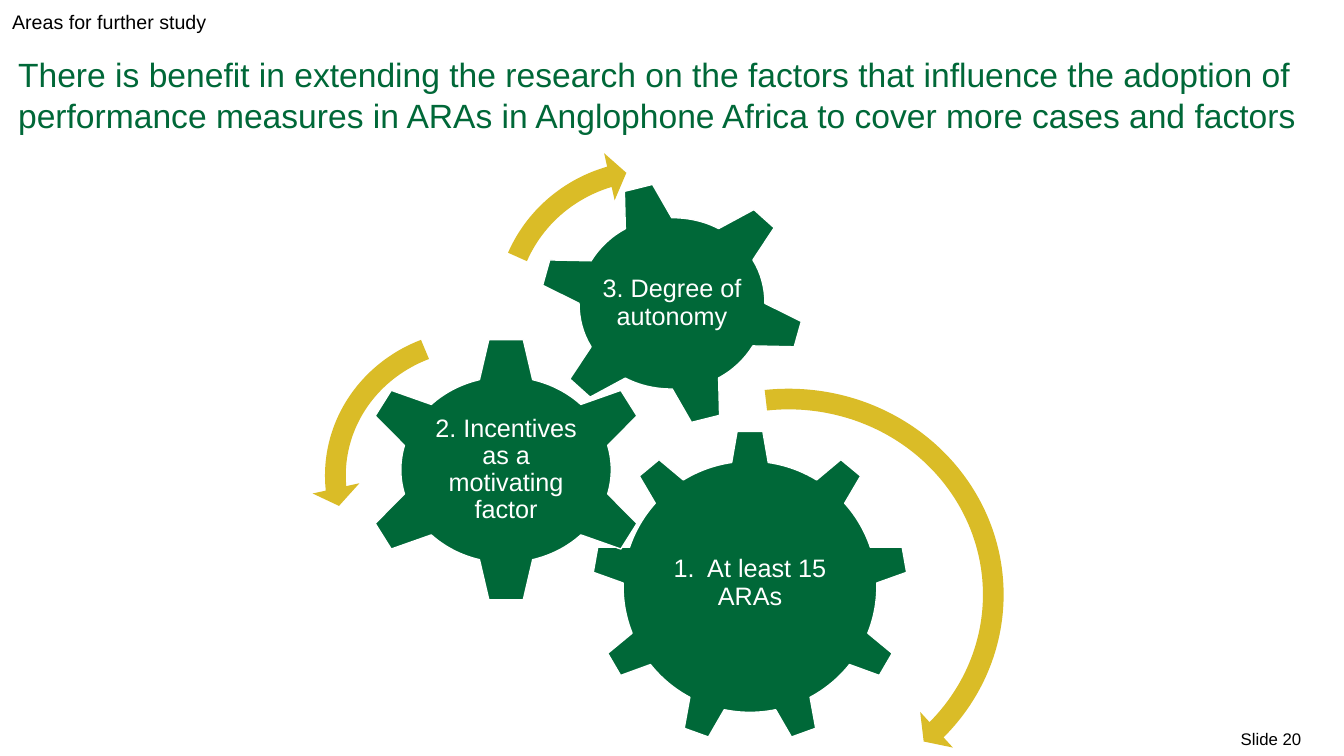
from dataclasses import dataclass
from math import atan2, cos, pi, radians, sin, tan

from lxml.etree import SubElement
from pptx import Presentation
from pptx.dml.color import RGBColor
from pptx.enum.shapes import MSO_SHAPE
from pptx.enum.text import MSO_ANCHOR, PP_ALIGN
from pptx.oxml.ns import qn
from pptx.util import Pt


@dataclass(frozen=True)
class Theme:
    font: str = "Arial"
    green: RGBColor = RGBColor(0x00, 0x68, 0x38)
    gold: RGBColor = RGBColor(0xDA, 0xBC, 0x27)
    white: RGBColor = RGBColor(0xFF, 0xFF, 0xFF)
    black: RGBColor = RGBColor(0, 0, 0)
    title: int = 24
    label: int = 18
    topic: int = 14
    foot: int = 12


THEME = Theme()


def apply(item, style):
    for name, value in style.items():
        setattr(item, name, value)


def write(shape, text, size, color, frame, para=None):
    body = shape.text_frame
    apply(body, frame)
    line = body.paragraphs[0]
    apply(line, para or {})
    run = line.add_run()
    run.text = text
    apply(run.font, {"name": THEME.font, "size": Pt(size)})
    run.font.color.rgb = color


def paint(shape, fill, edge=None):
    shape.shadow.inherit = False
    shape.fill.solid()
    shape.fill.fore_color.rgb = fill
    if edge is None:
        shape.line.fill.background()
    else:
        shape.line.color.rgb = edge
        shape.line.width = Pt(1)


def add_text(slide, box, text, size, color, **frame):
    shape = slide.shapes.add_textbox(*map(Pt, box))
    write(shape, text, size, color, frame)


def header(slide, box):
    left, top, width, height = box
    add_text(slide, (left, top, 154, 24.5), "Areas for further study",
             THEME.topic, THEME.black, word_wrap=False)
    title = ("There is benefit in extending the research on the factors that "
             "influence the adoption of performance measures in ARAs in "
             "Anglophone Africa to cover more cases and factors")
    add_text(slide, (left + 4.3, top + 31.7, width, height - 31.7), title,
             THEME.title, THEME.green, word_wrap=True)


def footer(slide, box):
    add_text(slide, box, "Slide 20", THEME.foot, THEME.black,
             word_wrap=True, vertical_anchor=MSO_ANCHOR.MIDDLE)


def even_teeth(count, rim, tip, base, crest, squash):
    sides = ((rim, -base), (tip, -crest), (tip, crest), (rim, base))
    return [
        [(r * sin(radians(360 * i / count + a)),
          -r * squash * cos(radians(360 * i / count + a))) for r, a in sides]
        for i in range(count)
    ]


def mirror(teeth):
    return teeth + [[(-x, -y) for x, y in tooth] for tooth in teeth]


def arc(start, end, radii):
    rx, ry = radii
    first, last = (atan2(y / ry, x / rx) for x, y in (start, end))
    pull = 4 / 3 * tan((last - first) % (2 * pi) / 4)
    return [
        (start[0] - pull * rx * sin(first), start[1] + pull * ry * cos(first)),
        (end[0] + pull * rx * sin(last), end[1] - pull * ry * cos(last)),
        end,
    ]


def bend(shape, center, teeth, radii):
    lines = list(shape.element.iter(qn("a:lnTo")))
    for line, tooth, follow in zip(lines[3::4], teeth, teeth[1:] + teeth[:1]):
        line.tag = qn("a:cubicBezTo")
        line.remove(line[0])
        for x, y in arc(tooth[-1], follow[0], radii):
            dot = SubElement(line, qn("a:pt"))
            dot.set("x", str(Pt(center[0] + x) - shape.left))
            dot.set("y", str(Pt(center[1] + y) - shape.top))


def gear(slide, center, teeth, radii, text, room, rise=0):
    cx, cy = center
    dots = [(Pt(cx + x), Pt(cy + y)) for tooth in teeth for x, y in tooth]
    draft = slide.shapes.build_freeform(*dots[0])
    draft.add_line_segments(dots[1:] + dots[:1], close=True)
    shape = draft.convert_to_shape()
    bend(shape, center, teeth, radii)
    paint(shape, THEME.green, THEME.white)
    side = (shape.width - Pt(room)) // 2
    frame = {"word_wrap": True, "vertical_anchor": MSO_ANCHOR.MIDDLE,
             "margin_left": side, "margin_right": side,
             "margin_top": 0, "margin_bottom": Pt(2 * rise)}
    write(shape, text, THEME.label, THEME.white, frame,
          {"alignment": PP_ALIGN.CENTER, "line_spacing": 0.9})


def arrow(slide, kind, box, bends, turn=0):
    shape = slide.shapes.add_shape(kind, *map(Pt, box))
    for i, value in enumerate(bends):
        shape.adjustments[i] = value
    shape.rotation = turn
    paint(shape, THEME.gold)


def gears(slide, box):
    left, top = box[:2]
    upper = [(53.4, -46.6), (82, -56.7), (93.5, -38.4), (72.6, -17.3)]
    lower = [(x, -y) for x, y in reversed(upper)]
    crown = [(-19, -64.3), (-12.3, -92.9), (12.3, -92.9), (19, -64.3)]
    tilted = [
        [(33.3, -53.4), (58.5, -67), (73, -54), (57.8, -31)],
        [(66.4, 0), (92.4, 12.9), (87.3, 31), (57.8, 30.4)],
        [(33.3, 53.3), (34, 80), (13.9, 85), (0.2, 61.2)],
    ]
    parts = [
        ((313.2, 313.3), even_teeth(9, 90.6, 112.4, 8.3, 4.7, 0.99),
         (90.6, 89.7), "1.  At least 15 ARAs", 119, 0.7),
        ((139, 229.7), mirror([crown, upper, lower]), (75, 66.5),
         "2. Incentives as a motivating factor", 109, 0),
        ((257.5, 110.9), mirror(tilted), (66.4, 61.2),
         "3. Degree of autonomy", 111, 0),
    ]
    for (x, y), *rest in parts:
        gear(slide, (left + x, top + y), *rest)

    right, back = MSO_SHAPE.CIRCULAR_ARROW, MSO_SHAPE.LEFT_CIRCULAR_ARROW
    arrows = [
        (right, (177.4, 162, 326.9, 313.9),
         (0.047, 2.99, 25.456, 157.993, 0.055), 0),
        (back, (0, 119.8, 237.6, 228.2),
         (0.065, 4.3, 104.891, 148.378, 0.075), 0),
        (right, (120.2, 0, 256.3, 246.2),
         (0.06, 3.941, 133.138, 105.082, 0.07), 29),
    ]
    for kind, (x, y, *size), bends, turn in arrows:
        arrow(slide, kind, (left + x, top + y, *size), bends, turn)


def main():
    deck = Presentation()
    apply(deck, {"slide_width": Pt(960), "slide_height": Pt(540)})
    slide = deck.slides.add_slide(deck.slide_layouts[6])
    footer(slide, (879.1, 517, 77.8, 20.9))
    header(slide, (1.6, 3.6, 931.7, 97.2))
    gears(slide, (222.5, 105.8, 504, 475.9))
    deck.save("out.pptx")


if __name__ == "__main__":
    main()
